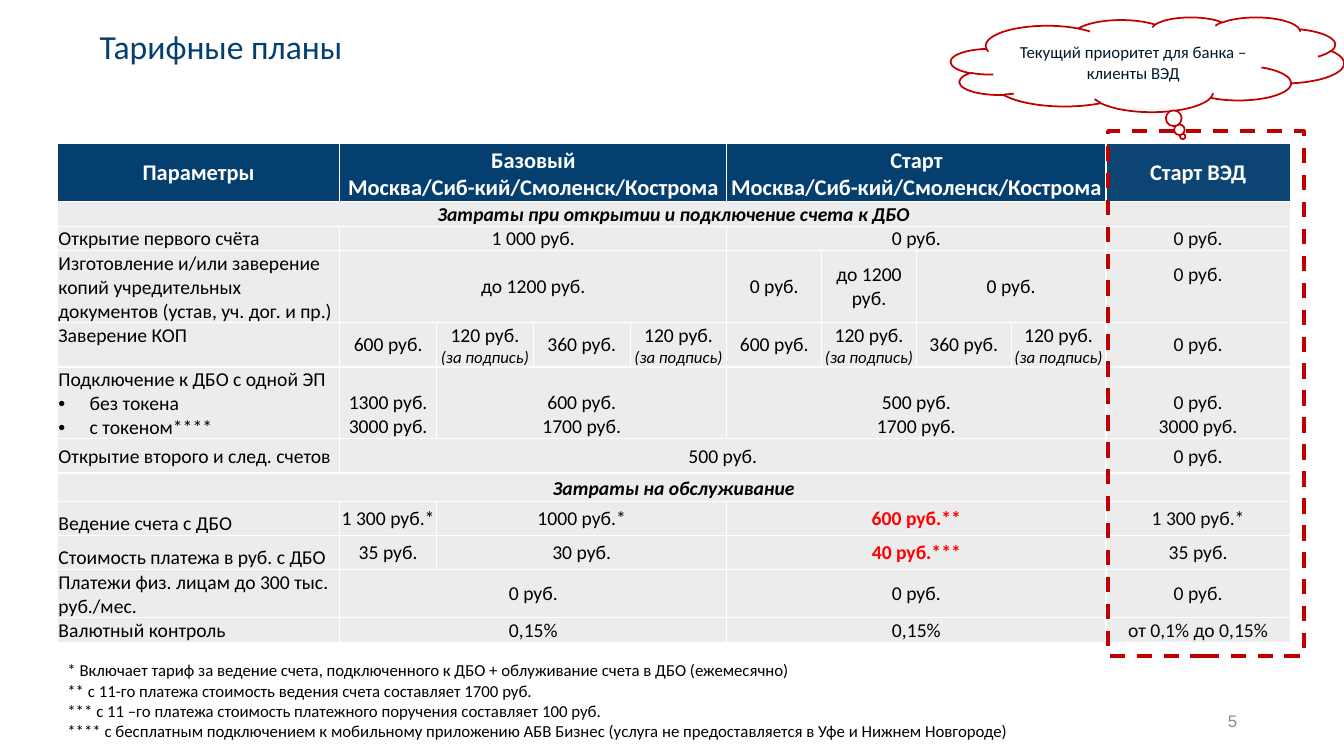
from lxml import etree
from pptx import Presentation
from pptx.dml.color import RGBColor
from pptx.enum.dml import MSO_LINE
from pptx.enum.shapes import MSO_SHAPE
from pptx.enum.text import MSO_ANCHOR, PP_ALIGN
from pptx.oxml.ns import qn
from pptx.util import Inches, Pt

LEFT, CENTER, RIGHT = PP_ALIGN.LEFT, PP_ALIGN.CENTER, PP_ALIGN.RIGHT
TOP, MIDDLE, BOTTOM = MSO_ANCHOR.TOP, MSO_ANCHOR.MIDDLE, MSO_ANCHOR.BOTTOM
RECTANGLE, CLOUD = MSO_SHAPE.RECTANGLE, MSO_SHAPE.CLOUD_CALLOUT
DASH = MSO_LINE.DASH

COLORS = {
    "navy": "053F6F", "ink": "02192C", "black": "000000", "white": "FFFFFF",
    "cell": "ECECEC", "accent": "C00000", "alert": "FF0000", "gray": "8C8C8C",
}

# Column and row shares of the table
COLUMNS = [2.8] + [0.96] * 4 + [0.94] * 4 + [1.83]
HEADER = dict(bold=True, size=16, color="white", fill="navy")
SECTION = dict(bold=True, italic=True, align=CENTER, anchor=BOTTOM)
ALERT = dict(bold=True, color="alert")
LOW = dict(anchor=BOTTOM)
SIGNED = "120 руб.\n(за подпись)"
SMALL_LINE = "(за подпись)"
CITIES = "Москва/Сиб-кий/Смоленск/Кострома"

# Each row: height, then cells as (columns spanned, text, format)
ROWS = [
    (0.58, [(1, "Параметры", {**HEADER, "align": CENTER}),
            (4, "Базовый\n" + CITIES, {**HEADER, **LOW}),
            (4, "Старт\n" + CITIES, {**HEADER, **LOW}),
            (1, "Старт ВЭД", HEADER)]),
    (0.23, [(10, "Затраты при открытии и подключение счета к ДБО", SECTION)]),
    (0.23, [(1, "Открытие первого счёта", LOW), (4, "1 000 руб.", {}),
            (4, "0 руб.", {}), (1, "0 руб.", {})]),
    (0.68, [(1, "Изготовление и/или заверение копий учредительных "
                "документов (устав, уч. дог. и пр.)", {}),
            (4, "до 1200 руб.", {}), (1, "0 руб.", {}), (1, "до 1200 руб.", {}),
            (2, "0 руб.", {}), (1, "0 руб.", dict(bottom=0.24))]),
    (0.42, [(1, "Заверение КОП", dict(anchor=TOP))]
           + [(1, price, {}) for price in ("600 руб.", SIGNED, "360 руб.", SIGNED)] * 2
           + [(1, "0 руб.", {})]),
    (0.68, [(1, "Подключение к ДБО с одной ЭП\n• без токена\n• с токеном****",
             dict(anchor=TOP)),
            (1, "1300 руб.\n3000 руб.", LOW), (3, "600 руб.\n1700 руб.", LOW),
            (4, "500 руб.\n1700 руб.", LOW), (1, "0 руб.\n3000 руб.", LOW)]),
    (0.34, [(1, "Открытие второго и след. счетов", {}), (8, "500 руб.", {}),
            (1, "0 руб.", {})]),
    (0.28, [(10, "Затраты на обслуживание", SECTION)]),
    (0.34, [(1, "Ведение счета c ДБО", LOW), (1, "1 300 руб.*", {}),
            (3, "1000 руб.*", {}), (4, "600 руб.**", ALERT), (1, "1 300 руб.*", {})]),
    (0.34, [(1, "Стоимость платежа в руб. с ДБО", LOW), (1, "35 руб.", {}),
            (3, "30 руб.", {}), (4, "40 руб.***", ALERT), (1, "35 руб.", {})]),
    (0.45, [(1, "Платежи физ. лицам до 300 тыс. руб./мес.", LOW),
            (4, "0 руб.", {}), (4, "0 руб.", {}), (1, "0 руб.", {})]),
    (0.23, [(1, "Валютный контроль", LOW), (4, "0,15%", LOW), (4, "0,15%", LOW),
            (1, "от 0,1% до 0,15%", {})]),
]

FOOTNOTES = """* Включает тариф за ведение счета, подключенного к ДБО + облуживание счета в ДБО (ежемесячно)
** с 11-го платежа стоимость ведения счета составляет 1700 руб.
*** с 11 –го платежа стоимость платежного поручения составляет 100 руб.
**** с бесплатным подключением к мобильному приложению АБВ Бизнес (услуга не предоставляется в Уфе и Нижнем Новгороде)"""


def rgb(name):
    return RGBColor.from_string(COLORS[name])


def add_bullet(paragraph):
    properties = paragraph._p.get_or_add_pPr()
    properties.set("marL", str(Inches(0.31)))
    properties.set("indent", str(-Inches(0.31)))
    etree.SubElement(properties, qn("a:buFont"), typeface="Arial")
    etree.SubElement(properties, qn("a:buChar"), char="•")


def write(frame, text, size, color, align=LEFT, font="Calibri", bold=False, italic=False):
    frame.word_wrap = True
    for index, line in enumerate(text.split("\n")):
        paragraph = frame.paragraphs[0] if index == 0 else frame.add_paragraph()
        paragraph.alignment = align
        if line.startswith("• "):
            add_bullet(paragraph)
            line = line[2:]
        run = paragraph.add_run()
        run.text = line
        small = line == SMALL_LINE
        formats = dict(name=font, size=Pt(12 if small else size),
                       bold=bold, italic=italic or small)
        for name, value in formats.items():
            setattr(run.font, name, value)
        run.font.color.rgb = rgb(color)


def add_text(slide, box, text, anchor=TOP, **formats):
    frame = slide.shapes.add_textbox(*map(Inches, box)).text_frame
    frame.vertical_anchor = anchor
    write(frame, text, **formats)
    return frame


def style_cell(cell, fill, anchor, bottom):
    cell.fill.solid()
    cell.fill.fore_color.rgb = rgb(fill)
    formats = dict(vertical_anchor=anchor, margin_left=Inches(0.01),
                   margin_right=Inches(0.01), margin_top=Inches(0.01),
                   margin_bottom=Inches(bottom))
    for name, value in formats.items():
        setattr(cell, name, value)
    # White borders stand before the fill
    properties = cell._tc.get_or_add_tcPr()
    for index, side in enumerate(("lnL", "lnR", "lnT", "lnB")):
        border = etree.Element(qn("a:" + side), w=str(Pt(1)))
        solid = etree.SubElement(border, qn("a:solidFill"))
        etree.SubElement(solid, qn("a:srgbClr"), val=COLORS["white"])
        properties.insert(index, border)


def add_tariff_table(slide, box):
    left, top, width, height = map(Inches, box)
    table = slide.shapes.add_table(len(ROWS), len(COLUMNS), left, top, width, height).table
    table.first_row = table.horz_banding = False
    for column, share in zip(table.columns, COLUMNS):
        column.width = round(width * share / sum(COLUMNS))
    total = sum(share for share, _ in ROWS)
    for row_index, (share, cells) in enumerate(ROWS):
        table.rows[row_index].height = round(height * share / total)
        start = 0
        for span, text, formats in cells:
            look = dict(size=14, color="black", align=CENTER if start else LEFT,
                        fill="cell", anchor=MIDDLE, bottom=0)
            look.update(formats)
            fill, anchor, bottom = (look.pop(key) for key in ("fill", "anchor", "bottom"))
            for column_index in range(start, start + span):
                style_cell(table.cell(row_index, column_index), fill, anchor, bottom)
            cell = table.cell(row_index, start)
            if span > 1:
                cell.merge(table.cell(row_index, start + span - 1))
            write(cell.text_frame, text, **look)
            start += span


def add_outlined(slide, kind, box, line_width):
    shape = slide.shapes.add_shape(kind, *map(Inches, box))
    shape.shadow.inherit = False
    shape.fill.solid()
    shape.fill.fore_color.rgb = rgb("white")
    shape.line.color.rgb = rgb("accent")
    shape.line.width = Pt(line_width)
    return shape


def add_highlight(slide, box):
    frame = add_outlined(slide, RECTANGLE, box, 2.75)
    frame.line.dash_style = DASH
    color = frame.fill._xPr.find(qn("a:solidFill"))[0]
    etree.SubElement(color, qn("a:alpha"), val="3000")


def add_cloud(slide, box, text):
    cloud = add_outlined(slide, CLOUD, box, 1.25)
    cloud.adjustments[0], cloud.adjustments[1] = 0.09, 0.76
    cloud.text_frame.vertical_anchor = MIDDLE
    write(cloud.text_frame, text, size=12, color="ink", align=CENTER)


def main():
    presentation = Presentation()
    presentation.slide_width, presentation.slide_height = Inches(13.33), Inches(7.5)
    slide = presentation.slides.add_slide(presentation.slide_layouts[6])

    # Page number
    number = add_text(slide, (10.99, 6.95, 1.43, 0.4), "5", anchor=MIDDLE,
                      size=12, color="gray", align=RIGHT, font="Arial")
    number.margin_right = Inches(0.15)
    # Tariffs
    add_tariff_table(slide, (0.57, 1.42, 12.23, 4.8))
    # Title and footnotes
    title = add_text(slide, (0.89, 0.28, 9.32, 0.4), "Тарифные планы", anchor=MIDDLE,
                     size=24, color="navy")
    title.paragraphs[0].line_spacing = 0.9
    add_text(slide, (0.57, 6.5, 10.85, 0.91), FOOTNOTES, size=12, color="black")
    # Highlighted plan
    add_highlight(slide, (10.99, 1.3, 1.94, 5.21))
    add_cloud(slide, (9.43, 0.17, 3.9, 0.94),
              "Текущий приоритет для банка – клиенты ВЭД")

    presentation.save("out.pptx")


if __name__ == "__main__":
    main()
